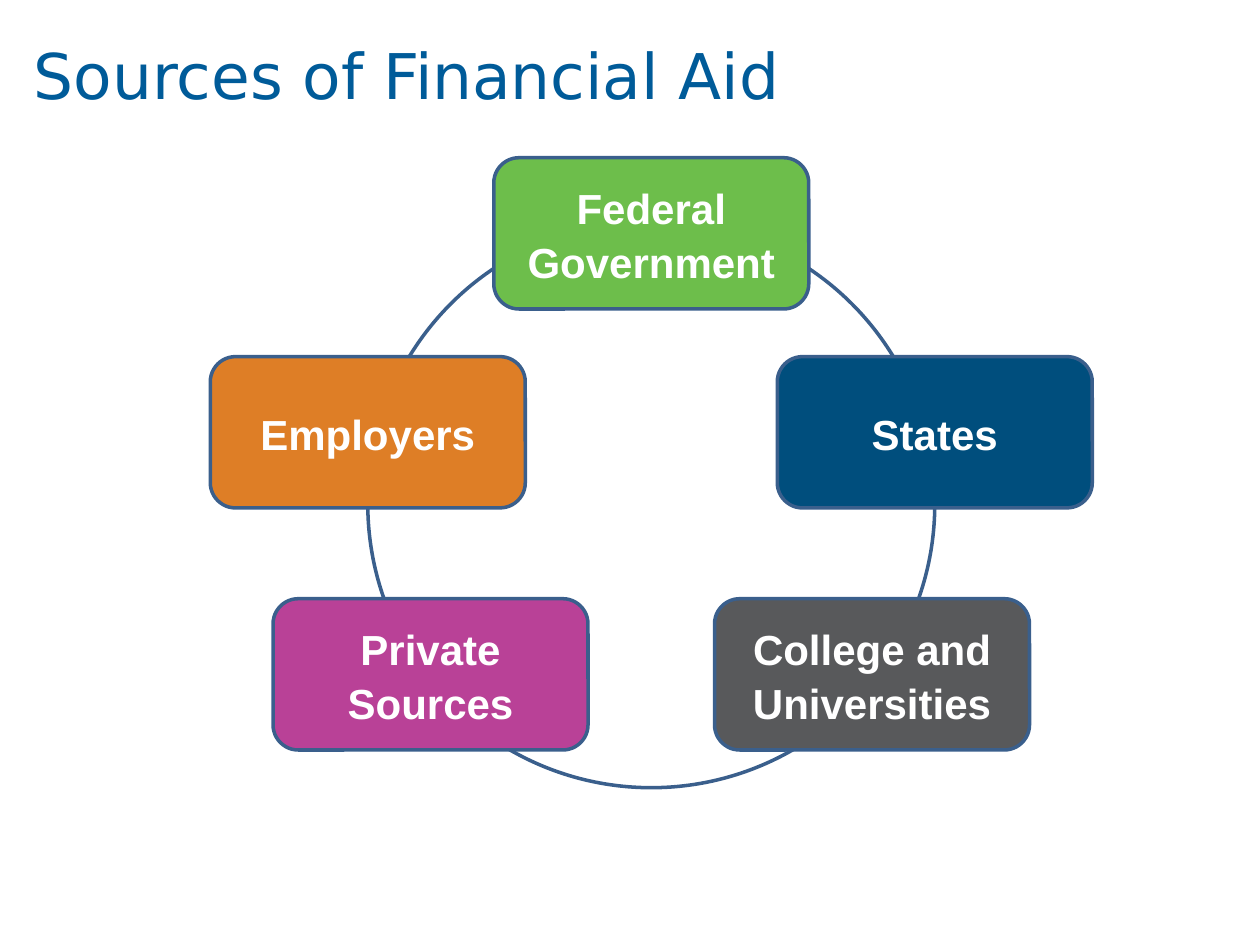
import pptx
import pptx.util
import pptx.dml.color
import pptx.enum.shapes
import pptx.enum.text

Cm, Pt = pptx.util.Cm, pptx.util.Pt
RGBColor = pptx.dml.color.RGBColor
MSO_SHAPE = pptx.enum.shapes.MSO_SHAPE
MSO_ANCHOR = pptx.enum.text.MSO_ANCHOR
PP_ALIGN = pptx.enum.text.PP_ALIGN

TITLE_BLUE = RGBColor(0x00, 0x5B, 0x99)
OUTLINE = RGBColor(0x3A, 0x5F, 0x8C)
WHITE = RGBColor(0xFF, 0xFF, 0xFF)
GREEN = RGBColor(0x6D, 0xBE, 0x4B)
NAVY = RGBColor(0x00, 0x4E, 0x7D)
GRAY = RGBColor(0x58, 0x59, 0x5B)
MAGENTA = RGBColor(0xB9, 0x41, 0x97)
ORANGE = RGBColor(0xDE, 0x7E, 0x26)

# Layout in centimetres: everything is symmetric about the ring's centre line
CENTER_X = 13.13
RING_TOP, RING_SIZE = 4.45, 11.43
BOX_W, BOX_H = 6.35, 3.05
TOP_ROW, MIDDLE_ROW, BOTTOM_ROW = 3.18, 7.19, 12.07
MIDDLE_DX, BOTTOM_DX = RING_SIZE / 2, 4.45

# Label, colour, horizontal offset from the centre line, top
SOURCES = [
    ("Federal Government", GREEN, 0, TOP_ROW),
    ("States", NAVY, MIDDLE_DX, MIDDLE_ROW),
    ("College and Universities", GRAY, BOTTOM_DX, BOTTOM_ROW),
    ("Private Sources", MAGENTA, -BOTTOM_DX, BOTTOM_ROW),
    ("Employers", ORANGE, -MIDDLE_DX, MIDDLE_ROW),
]


def add_run(p, text, font, size, color, bold=False):
    r = p.add_run()
    r.text = text
    r.font.name = font
    r.font.size = Pt(size)
    r.font.bold = bold
    r.font.color.rgb = color


def add_outlined(s, kind, center_x, top, width, height):
    sp = s.shapes.add_shape(kind, Cm(center_x - width / 2), Cm(top),
                            Cm(width), Cm(height))
    sp.shadow.inherit = False
    sp.line.color.rgb = OUTLINE
    sp.line.width = Pt(2)
    return sp


def set_title(s, text):
    sp = s.shapes.title
    sp.left, sp.top, sp.width, sp.height = Cm(0.43), Cm(0), Cm(24.56), Cm(3.18)
    tf = sp.text_frame
    tf.word_wrap = True
    tf.vertical_anchor = MSO_ANCHOR.MIDDLE
    p = tf.paragraphs[0]
    p.alignment = PP_ALIGN.LEFT
    p.line_spacing = 0.9
    add_run(p, text, "DejaVu Sans", 36, TITLE_BLUE)


def add_ring(s):
    sp = add_outlined(s, MSO_SHAPE.OVAL, CENTER_X, RING_TOP,
                      RING_SIZE, RING_SIZE)
    sp.fill.background()


def add_source(s, label, color, dx, top):
    sp = add_outlined(s, MSO_SHAPE.ROUNDED_RECTANGLE, CENTER_X + dx, top,
                      BOX_W, BOX_H)
    sp.fill.solid()
    sp.fill.fore_color.rgb = color
    tf = sp.text_frame
    tf.word_wrap = True
    tf.vertical_anchor = MSO_ANCHOR.MIDDLE
    p = tf.paragraphs[0]
    p.alignment = PP_ALIGN.CENTER
    p.line_spacing = 1.06
    add_run(p, label, "Arial", 24, WHITE, bold=True)


def main():
    prs = pptx.Presentation()
    prs.slide_width, prs.slide_height = Cm(25.4), Cm(19.05)
    s = prs.slides.add_slide(prs.slide_layouts[5])

    set_title(s, "Sources of Financial Aid")

    # Ring first, so that the boxes cover it
    add_ring(s)
    for source in SOURCES:
        add_source(s, *source)

    prs.save("out.pptx")


if __name__ == "__main__":
    main()
